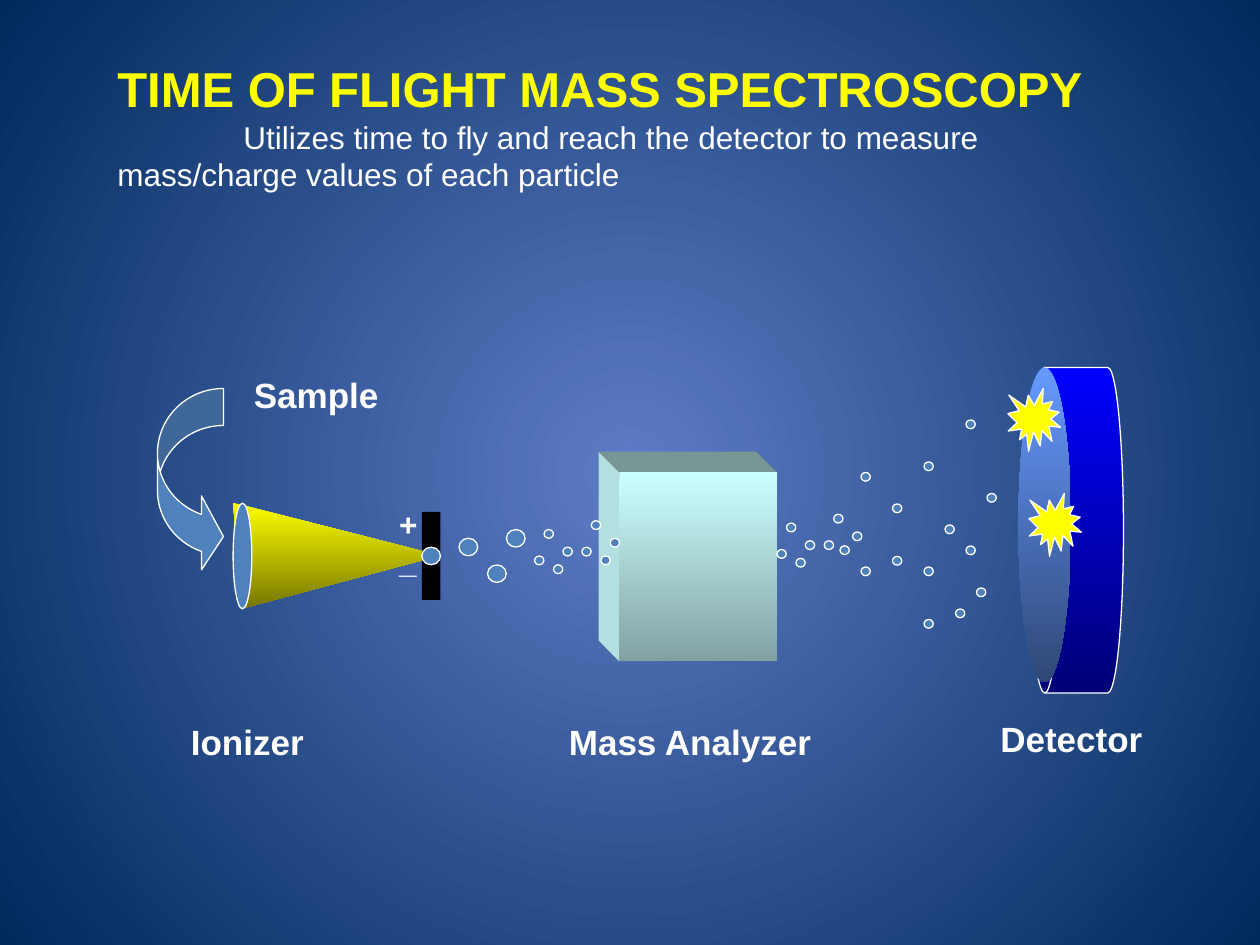
import dataclasses
import typing

import pptx
import pptx.dml.color
import pptx.enum.shapes
import pptx.enum.text
import pptx.oxml
import pptx.oxml.ns
import pptx.util

Pt = pptx.util.Pt
Shape = pptx.enum.shapes.MSO_SHAPE
Pair = tuple[float, float]
Paint = typing.Union[str, tuple[str, str]]  # one colour, or top and bottom


@dataclasses.dataclass(frozen=True)
class Theme:
    background: tuple[str, str] = ("5E7CC5", "00295C")
    white: str = "FFFFFF"
    yellow: str = "FFFF00"
    black: str = "000000"
    ion: str = "4F81BD"
    cone: tuple[str, str] = ("FFFF00", "767600")
    drum: tuple[str, str] = ("0000FF", "000076")
    lens: tuple[str, str] = ("6699FF", "2F4776")
    box_front: tuple[str, str] = ("CCFFFF", "82A2A2")
    box_side: str = "B2DFDF"
    box_top: str = "789696"
    font: str = "Arial"
    title_size: float = 28
    label_size: float = 20
    body_size: float = 18
    outline: float = 0.75


@dataclasses.dataclass(frozen=True)
class Part:
    kind: Shape
    left: float
    top: float
    width: float
    height: float
    paint: Paint
    outlined: bool = True


@dataclasses.dataclass(frozen=True)
class Label:
    text: str
    left: float
    top: float
    width: float
    height: float
    size: float


THEME = Theme()
rgb = pptx.dml.color.RGBColor.from_string

# Ionizer cone and the ions leaving it
CONE = [(133.2, 287.3), (251.3, 317.5), (138.2, 347.8)]
IONIZER = [
    Part(Shape.OVAL, 133.2, 287.5, 10.7, 60.5, THEME.ion),
    Part(Shape.RECTANGLE, 241, 292.5, 10.7, 50.4, THEME.black, False),
]
BIG_ION = (10.7, 10)
BIG_IONS = [(289.4, 302.6), (278.6, 322.8), (262.3, 307.6), (241, 312.7)]

# Small ions: two clusters on the same grid, then the scattered ones
SMALL_ION = (5.3, 5)
GRID = (5.4, 5.04)
CLUSTER = [(2, 5), (1, 1), (0, 4), (3, 3), (6, 0), (5, 3), (8, 2)]
CLUSTER_ORIGINS = [(305.5, 297.6), (444, 293.9)]
LOOSE_IONS = [(343.4, 317.7), (480, 311.9)]
SCATTER_STEP = 6
SCATTER = [
    (85, 48), (92, 40), (91, 58), (90, 50), (88, 44), (82, 54), (85, 53),
    (88, 59), (88, 54), (92, 52), (93, 56), (94, 47), (82, 45),
]

# Mass analyzer: a front face and its depth towards the upper left
BOX_LEFT, BOX_TOP, BOX_WIDTH, BOX_HEIGHT, BOX_DEPTH = 354, 270, 90, 108, 12

# Detector
DRUM = Part(Shape.FLOWCHART_DIRECT_ACCESS_STORAGE, 588, 210, 54, 186, THEME.drum)
LENS = Part(Shape.OVAL, 582, 210, 30, 180, THEME.lens, False)
BURST_SIZE = (30, 36)
BURSTS = [(576, 222), (588, 282)]

SAMPLE_ARROW = Part(Shape.CURVED_RIGHT_ARROW, 90, 222, 37.7, 105.8, THEME.ion)
ARROW_ADJUSTMENTS = (0.561, 1.122, 0.333)

LABELS = [
    Label("Ionizer", 102, 408, 79, 31, THEME.label_size),
    Label("Sample", 138, 210, 86, 31, THEME.label_size),
    Label("Mass Analyzer", 318, 408, 153, 31, THEME.label_size),
    Label("Detector", 564.5, 406.5, 96, 31, THEME.label_size),
    Label("+", 221, 285.1, 25, 29, THEME.body_size),
    Label("_", 221, 306, 25, 29, THEME.body_size),
]
TITLE = "TIME OF FLIGHT MASS SPECTROSCOPY"
SUMMARY = (
    "\tUtilizes time to fly and reach the detector to measure "
    "mass/charge values of each particle"
)
SUMMARY_TAB = 72


def fill_gradient(fill, colours: tuple[str, str]) -> None:
    fill.gradient()
    fill.gradient_angle = 270
    for stop, position, colour in zip(fill.gradient_stops, (0, 1), colours):
        stop.position = position
        stop.color.rgb = rgb(colour)


def style(shape, paint: Paint, outlined: bool) -> None:
    shape.shadow.inherit = False
    if isinstance(paint, str):
        shape.fill.solid()
        shape.fill.fore_color.rgb = rgb(paint)
    else:
        fill_gradient(shape.fill, paint)
    if outlined:
        shape.line.color.rgb = rgb(THEME.white)
        shape.line.width = Pt(THEME.outline)
    else:
        shape.line.fill.background()


def add_part(page, part: Part):
    frame = (part.left, part.top, part.width, part.height)
    shape = page.shapes.add_shape(part.kind, *map(Pt, frame))
    style(shape, part.paint, part.outlined)
    return shape


def add_ions(page, places: list[Pair], size: Pair) -> None:
    for place in places:
        add_part(page, Part(Shape.OVAL, *place, *size, THEME.ion))


def add_polygon(page, corners: list[Pair], paint: Paint) -> None:
    points = [(Pt(x), Pt(y)) for x, y in corners]
    builder = page.shapes.build_freeform(*points[0], scale=1.0)
    builder.add_line_segments(points[1:], close=True)
    style(builder.convert_to_shape(), paint, False)


def set_font(para, size: float, colour: str, bold: bool) -> None:
    para.font.name = THEME.font
    para.font.size = Pt(size)
    para.font.bold = bold
    para.font.color.rgb = rgb(colour)


def set_tab(para, position: float) -> None:
    tabs = pptx.oxml.parse_xml(
        f'<a:tabLst {pptx.oxml.ns.nsdecls("a")}>'
        f'<a:tab pos="{Pt(position)}" algn="l"/></a:tabLst>'
    )
    para._p.get_or_add_pPr().insert(0, tabs)


def add_label(page, label: Label) -> None:
    frame = (label.left, label.top, label.width, label.height)
    text = page.shapes.add_textbox(*map(Pt, frame)).text_frame
    text.word_wrap = False
    text.auto_size = pptx.enum.text.MSO_AUTO_SIZE.SHAPE_TO_FIT_TEXT
    text.text = label.text
    set_font(text.paragraphs[0], label.size, THEME.white, True)


def add_heading(page) -> None:
    text = page.shapes.add_textbox(Pt(60), Pt(30), Pt(582), Pt(85)).text_frame
    text.word_wrap = True
    text.text = TITLE
    set_font(text.paragraphs[0], THEME.title_size, THEME.yellow, True)
    para = text.add_paragraph()
    para.text = SUMMARY
    set_font(para, THEME.body_size, THEME.white, False)
    set_tab(para, SUMMARY_TAB)


def paint_background(page) -> None:
    fill_gradient(page.background.fill, THEME.background)
    # Turn the linear gradient into a circular one
    linear = page._element.find(".//" + pptx.oxml.ns.qn("a:lin"))
    circle = pptx.oxml.parse_xml(
        f'<a:path {pptx.oxml.ns.nsdecls("a")} path="circle">'
        '<a:fillToRect l="50000" t="50000" r="50000" b="50000"/></a:path>'
    )
    linear.getparent().replace(linear, circle)


def add_analyzer(page) -> None:
    right, bottom = BOX_LEFT + BOX_WIDTH, BOX_TOP + BOX_HEIGHT
    back_left, back_top = BOX_LEFT - BOX_DEPTH, BOX_TOP - BOX_DEPTH
    corner, back_corner = (BOX_LEFT, BOX_TOP), (back_left, back_top)
    add_polygon(page, [corner, back_corner, (back_left, bottom - BOX_DEPTH),
                       (BOX_LEFT, bottom)], THEME.box_side)
    add_polygon(page, [corner, back_corner, (right - BOX_DEPTH, back_top),
                       (right, BOX_TOP)], THEME.box_top)
    add_part(page, Part(Shape.RECTANGLE, *corner, BOX_WIDTH, BOX_HEIGHT,
                        THEME.box_front, False))


def main() -> None:
    deck = pptx.Presentation()
    deck.slide_width, deck.slide_height = Pt(720), Pt(540)
    page = deck.slides.add_slide(deck.slide_layouts[6])
    paint_background(page)

    # Apparatus
    drum = add_part(page, DRUM)
    drum._element.spPr.xfrm.set("flipH", "1")
    add_analyzer(page)
    add_polygon(page, CONE, THEME.cone)
    for part in IONIZER:
        add_part(page, part)
    arrow = add_part(page, SAMPLE_ARROW)
    for index, value in enumerate(ARROW_ADJUSTMENTS):
        arrow.adjustments[index] = value
    add_part(page, LENS)
    for place in BURSTS:
        add_part(page, Part(Shape.EXPLOSION1, *place, *BURST_SIZE, THEME.yellow))

    # Ions
    add_ions(page, BIG_IONS, BIG_ION)
    for left, top in CLUSTER_ORIGINS:
        places = [(left + col * GRID[0], top + row * GRID[1]) for col, row in CLUSTER]
        add_ions(page, places, SMALL_ION)
    scattered = [(col * SCATTER_STEP, row * SCATTER_STEP) for col, row in SCATTER]
    add_ions(page, LOOSE_IONS + scattered, SMALL_ION)

    # Words
    for label in LABELS:
        add_label(page, label)
    add_heading(page)
    deck.save("out.pptx")


if __name__ == "__main__":
    main()
